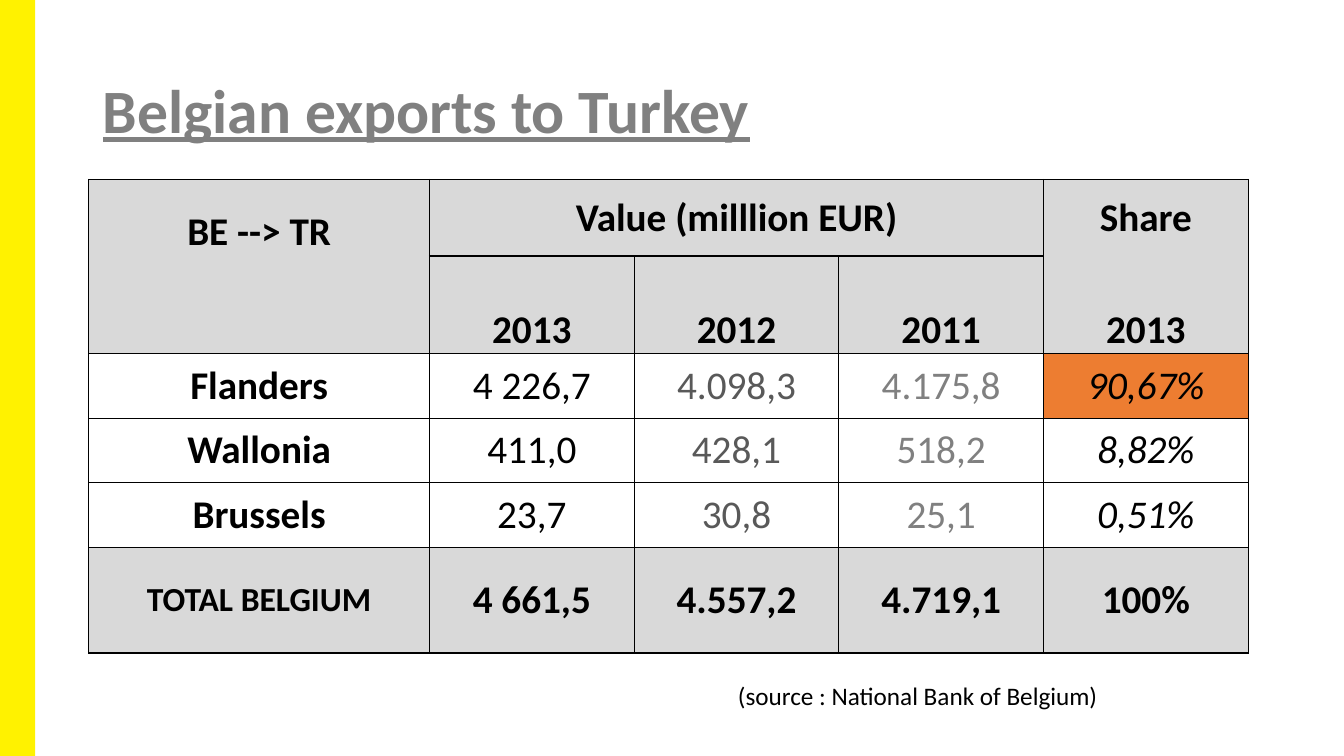
from lxml.etree import SubElement
from pptx import Presentation
from pptx.dml.color import RGBColor
from pptx.enum.shapes import MSO_SHAPE
from pptx.enum.text import MSO_ANCHOR, MSO_AUTO_SIZE, PP_ALIGN
from pptx.oxml.ns import qn
from pptx.util import Inches, Pt

COLORS = {
    "yellow": "FFF200",
    "gray": "808080",
    "dark_gray": "595959",
    "black": "000000",
    "shade": "D9D9D9",
    "orange": "ED7D31",
}
COLUMN_WIDTHS = [3.38, 2.03, 2.03, 2.03, 2.03]
ROW_HEIGHTS = [0.76, 0.97, 0.64, 0.64, 0.64, 1.05]
EXPORTS = [
    ["BE --> TR", "Value (milllion EUR)", "", "", "Share"],
    ["", "2013", "2012", "2011", "2013"],
    ["Flanders", "4 226,7", "4.098,3", "4.175,8", "90,67%"],
    ["Wallonia", "411,0", "428,1", "518,2", "8,82%"],
    ["Brussels", "23,7", "30,8", "25,1", "0,51%"],
    ["TOTAL BELGIUM", "4 661,5", "4.557,2", "4.719,1", "100%"],
]
REGION_ROWS = (2, 3, 4)
TOTAL_ROW = 5
SHARE_COLUMN = 4
REGION_TEXT_COLORS = ["black", "black", "dark_gray", "gray", "black"]


def color(name):
    return RGBColor.from_string(COLORS[name])


def format_paragraph(paragraph, size, color_name="black", bold=False, italic=False):
    font = paragraph.font
    font.name = "Calibri"
    font.size = Pt(size)
    font.bold = bold
    font.italic = italic
    font.color.rgb = color(color_name)


def add_side_bar(slide):
    bar = slide.shapes.add_shape(MSO_SHAPE.RECTANGLE, 0, 0, Inches(0.35), Inches(7.5))
    bar.shadow.inherit = False
    bar.fill.solid()
    bar.fill.fore_color.rgb = color("yellow")
    bar.line.fill.background()


def set_title(slide, text):
    title = slide.shapes.title
    title.left, title.top = Inches(0.92), Inches(0.4)
    title.width, title.height = Inches(11.5), Inches(1.45)
    frame = title.text_frame
    frame.text = text
    frame.vertical_anchor = MSO_ANCHOR.MIDDLE
    paragraph = frame.paragraphs[0]
    paragraph.alignment = PP_ALIGN.LEFT
    paragraph.line_spacing = 0.9
    format_paragraph(paragraph, 44, "gray", bold=True)
    paragraph.font.underline = True


def set_borders(cell, open_sides):
    properties = cell._tc.get_or_add_tcPr()
    for side in "LRTB":
        line = SubElement(properties, qn(f"a:ln{side}"), w=str(Pt(1)))
        if side in open_sides:
            SubElement(line, qn("a:noFill"))
        else:
            fill = SubElement(line, qn("a:solidFill"))
            SubElement(fill, qn("a:srgbClr"), val=COLORS["black"])


def fill_cell(cell, row, column):
    if row not in REGION_ROWS:
        fill_name = "shade"
    elif (row, column) == (REGION_ROWS[0], SHARE_COLUMN):
        fill_name = "orange"
    else:
        cell.fill.background()
        return
    cell.fill.solid()
    cell.fill.fore_color.rgb = color(fill_name)


def write_cell(cell, row, column, text):
    cell.margin_left = cell.margin_right = Inches(0.06)
    cell.margin_top = cell.margin_bottom = 0
    at_bottom = row == 1 or (row, column) == (0, 0)
    cell.vertical_anchor = MSO_ANCHOR.BOTTOM if at_bottom else MSO_ANCHOR.MIDDLE
    if not text:
        return
    cell.text = text
    paragraph = cell.text_frame.paragraphs[0]
    paragraph.alignment = PP_ALIGN.CENTER
    is_region = row in REGION_ROWS
    if column == 1 and row > 1 or is_region and column == SHARE_COLUMN:
        paragraph.space_after = Pt(12)
    format_paragraph(
        paragraph,
        24 if (row, column) == (TOTAL_ROW, 0) else 28,
        REGION_TEXT_COLORS[column] if is_region else "black",
        bold=not is_region or column == 0,
        italic=is_region and column == SHARE_COLUMN,
    )


def add_export_table(slide):
    table = slide.shapes.add_table(
        len(ROW_HEIGHTS), len(COLUMN_WIDTHS), Inches(0.88), Inches(1.78),
        Inches(sum(COLUMN_WIDTHS)), Inches(sum(ROW_HEIGHTS)),
    ).table
    table.first_row = table.horz_banding = False
    for column, width in zip(table.columns, COLUMN_WIDTHS):
        column.width = Inches(width)
    for row, height in zip(table.rows, ROW_HEIGHTS):
        row.height = Inches(height)
    table.cell(0, 1).merge(table.cell(0, 3))
    for row, texts in enumerate(EXPORTS):
        for column, text in enumerate(texts):
            cell = table.cell(row, column)
            is_outer = column in (0, SHARE_COLUMN)
            set_borders(cell, {0: "B", 1: "T"}.get(row, "") if is_outer else "")
            fill_cell(cell, row, column)
            write_cell(cell, row, column, text)


def add_source_note(slide, text):
    box = slide.shapes.add_textbox(Inches(7.22), Inches(6.7), Inches(3.81), Inches(0.4))
    frame = box.text_frame
    frame.word_wrap = False
    frame.auto_size = MSO_AUTO_SIZE.SHAPE_TO_FIT_TEXT
    frame.text = text
    format_paragraph(frame.paragraphs[0], 18)


def main():
    """Build the slide on Belgian exports to Turkey."""
    presentation = Presentation()
    presentation.slide_width = Inches(13.33)
    presentation.slide_height = Inches(7.5)
    slide = presentation.slides.add_slide(presentation.slide_layouts[5])
    add_side_bar(slide)
    set_title(slide, "Belgian exports to Turkey")
    add_export_table(slide)
    add_source_note(slide, "(source : National Bank of Belgium)")
    presentation.save("out.pptx")


if __name__ == "__main__":
    main()
